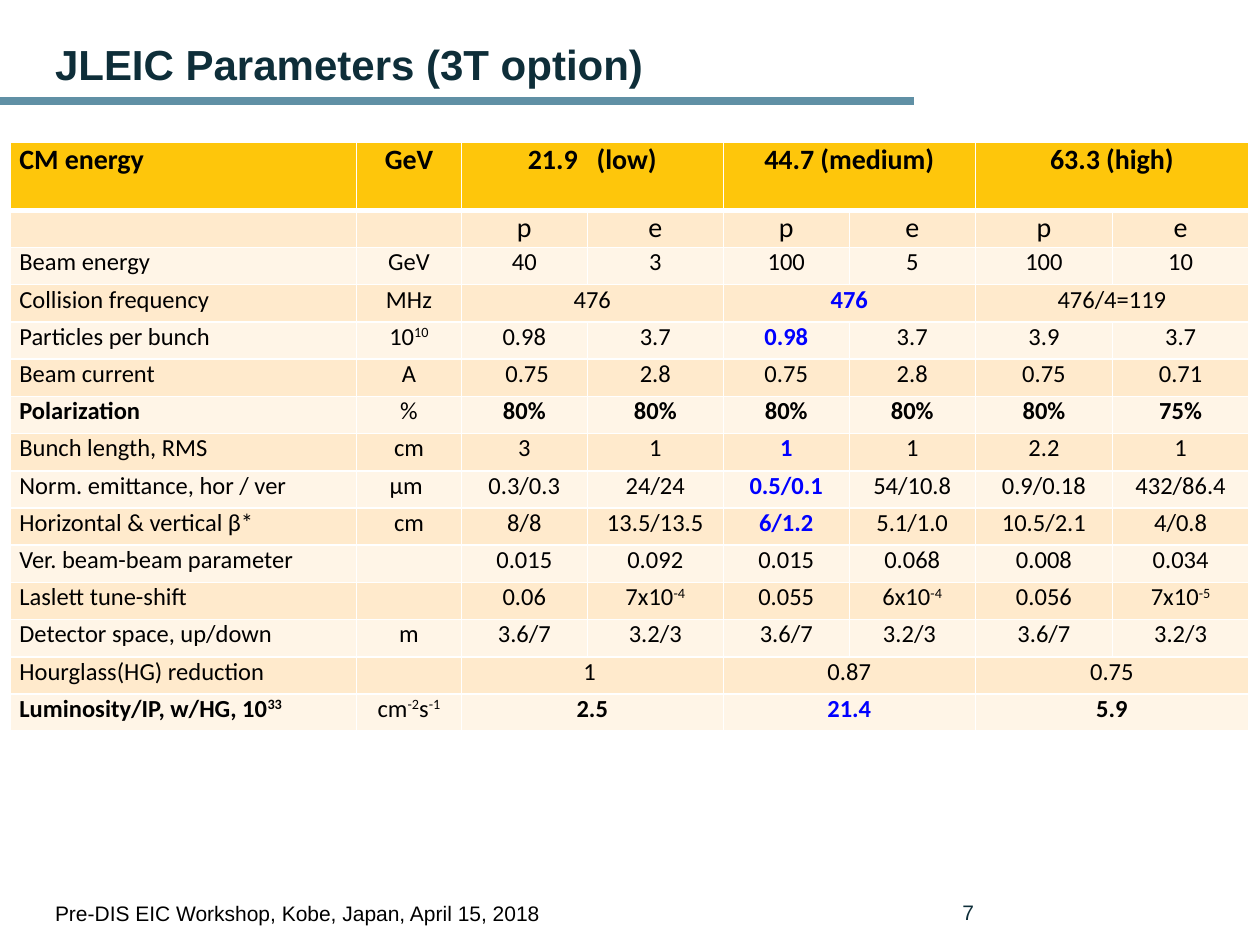
from dataclasses import dataclass

import pptx
import pptx.dml.color
import pptx.enum.shapes
import pptx.enum.text
import pptx.oxml.ns
import pptx.util
from lxml import etree

Cm, Pt = pptx.util.Cm, pptx.util.Pt
RGB = pptx.dml.color.RGBColor
ALIGN = pptx.enum.text.PP_ALIGN
ANCHOR = pptx.enum.text.MSO_ANCHOR
qn = pptx.oxml.ns.qn

BLACK = RGB(0x00, 0x00, 0x00)
WHITE = RGB(0xFF, 0xFF, 0xFF)
NAVY = RGB(0x0E, 0x2E, 0x39)
TEAL = RGB(0x60, 0x90, 0xA5)
BLUE = RGB(0x00, 0x00, 0xFF)
GOLD = RGB(0xFE, 0xC6, 0x0B)
SAND = RGB(0xFF, 0xEA, 0xCC)
CREAM = RGB(0xFF, 0xF5, 0xE7)


@dataclass
class Style:
    size: int
    font: str = "Calibri"
    color: RGB = BLACK
    bold: bool = False
    align: ALIGN = ALIGN.LEFT


@dataclass
class Row:
    """Three values span the p and e columns; six fill them singly."""
    label: str
    unit: str
    values: list[str]
    bold: bool = False
    blue: bool = False  # highlights the first medium-energy value
    size: int = 14


# Text between carets is superscript
ROWS = [
    Row("CM energy", "GeV", ["21.9   (low)", "44.7 (medium)", "63.3 (high)"],
        bold=True, size=16),
    Row("", "", ["p", "e"] * 3, size=16),
    Row("Beam energy", "GeV", ["40", "3", "100", "5", "100", "10"]),
    Row("Collision frequency", "MHz", ["476", "476", "476/4=119"], blue=True),
    Row("Particles per bunch", "10^10^",
        ["0.98", "3.7", "0.98", "3.7", "3.9", "3.7"], blue=True),
    Row("Beam current", "A", [" 0.75", "2.8", "0.75", "2.8", "0.75", "0.71"]),
    Row("Polarization", "%", ["80%"] * 5 + ["75%"], bold=True),
    Row("Bunch length, RMS", "cm", ["3", "1", "1", "1", "2.2", "1"], blue=True),
    Row("Norm. emittance, hor / ver", "μm ",
        ["0.3/0.3", "24/24", "0.5/0.1", "54/10.8", "0.9/0.18", "432/86.4"],
        blue=True),
    Row("Horizontal & vertical β*", "cm",
        ["8/8", "13.5/13.5", "6/1.2", "5.1/1.0", "10.5/2.1", "4/0.8"], blue=True),
    Row("Ver. beam-beam parameter", "",
        ["0.015", "0.092", "0.015", "0.068", "0.008", "0.034"]),
    Row("Laslett tune-shift", "",
        ["0.06", "7x10^-4^", "0.055", "6x10^-4^", "0.056", "7x10^-5^"]),
    Row("Detector space, up/down", "m",
        ["3.6/7", "3.2/3", "3.6/7", "3.2/3 ", "3.6/7", "3.2/3"]),
    Row("Hourglass(HG) reduction", "", ["1 ", "0.87", "0.75"]),
    Row("Luminosity/IP, w/HG, 10^33^", "cm^-2^s^-1^", ["2.5", "21.4", "5.9"],
        bold=True, blue=True),
]
COL_WIDTHS = [6.98, 2.11, 2.54, 2.74, 2.54, 2.54, 2.77, 2.74]
HEAD_HEIGHT, ROW_HEIGHT = 1.37, 0.75
MEDIUM_COL = 4


def write(p, text: str, style: Style) -> None:
    p.alignment = style.align
    p.font.name, p.font.size = style.font, Pt(style.size)
    for i, part in enumerate(text.split("^")):
        if part:
            r = p.add_run()
            r.text = part
            r.font.bold = style.bold
            r.font.color.rgb = style.color
            if i % 2:
                r.font._element.set("baseline", "30000")
    if not text:  # keeps empty cells from growing the row
        p._p.get_or_add_endParaRPr().set("sz", str(style.size * 100))


def add_text(s, box: tuple, text: str, style: Style, anchor=ANCHOR.TOP):
    tf = s.shapes.add_textbox(*map(Cm, box)).text_frame
    tf.word_wrap = True
    tf.vertical_anchor = anchor
    write(tf.paragraphs[0], text, style)
    return tf


def set_borders(cell, top: float, bottom: float) -> None:
    tc_pr = cell._tc.get_or_add_tcPr()
    for side, width in zip("LRTB", (1, 1, top, bottom)):
        ln = etree.SubElement(tc_pr, qn(f"a:ln{side}"), w=str(Pt(width)))
        fill = etree.SubElement(ln, qn("a:solidFill"))
        etree.SubElement(fill, qn("a:srgbClr"), val=str(WHITE))


def add_row(table, i: int, row: Row) -> None:
    fill = GOLD if i == 0 else SAND if i % 2 else CREAM
    for cell in table.rows[i].cells:
        set_borders(cell, 3 if i == 1 else 1, 3 if i == 0 else 1)
        cell.fill.solid()
        cell.fill.fore_color.rgb = fill
        cell.margin_left = cell.margin_right = Cm(0.18)
        cell.margin_top = cell.margin_bottom = 0

    span = 6 // len(row.values)
    texts = {0: row.label, 1: row.unit}
    texts.update({2 + span * k: v for k, v in enumerate(row.values)})
    for col, text in texts.items():
        if col > 1 and span > 1:
            table.cell(i, col).merge(table.cell(i, col + span - 1))
        blue = row.blue and col == MEDIUM_COL
        bold = blue or (row.bold and (col != 1 or i == 0))
        write(table.cell(i, col).text_frame.paragraphs[0], text,
              Style(row.size, color=BLUE if blue else BLACK, bold=bold,
                    align=ALIGN.CENTER if col else ALIGN.LEFT))


def add_parameters(s) -> None:
    heights = [HEAD_HEIGHT] + [ROW_HEIGHT] * (len(ROWS) - 1)
    table = s.shapes.add_table(
        len(ROWS), len(COL_WIDTHS), Cm(0.21), Cm(2.87),
        Cm(sum(COL_WIDTHS)), Cm(sum(heights))).table
    table.first_row = table.horz_banding = False
    for column, width in zip(table.columns, COL_WIDTHS):
        column.width = Cm(width)
    for table_row, height in zip(table.rows, heights):
        table_row.height = Cm(height)
    for i, row in enumerate(ROWS):
        add_row(table, i, row)


def main() -> None:
    prs = pptx.Presentation()
    prs.slide_width, prs.slide_height = Cm(25.4), Cm(19.05)
    s = prs.slides.add_slide(prs.slide_layouts[6])

    # Rule under the title
    rule = s.shapes.add_connector(pptx.enum.shapes.MSO_CONNECTOR.STRAIGHT,
                                  Cm(-0.03), Cm(2.04), Cm(18.42), Cm(2.04))
    rule.line.color.rgb = TEAL
    rule.line.width = Pt(4.5)
    etree.SubElement(rule._element.spPr, qn("a:effectLst"))

    # Footer, title and page number
    add_text(s, (0.86, 18.03, 15.24, 0.76),
             "Pre-DIS EIC Workshop, Kobe, Japan, April 15, 2018",
             Style(12, "Arial"))
    title = add_text(s, (0.86, 0.76, 23.52, 1.17), "JLEIC Parameters (3T option)",
                     Style(24, "Arial", NAVY, bold=True), ANCHOR.MIDDLE)
    title.paragraphs[0].line_spacing = 0.9
    add_text(s, (18.77, 17.96, 1.5, 0.84), "7",
             Style(12, "Arial", NAVY, align=ALIGN.CENTER), ANCHOR.MIDDLE)

    # Parameter table
    add_parameters(s)
    prs.save("out.pptx")


if __name__ == "__main__":
    main()
